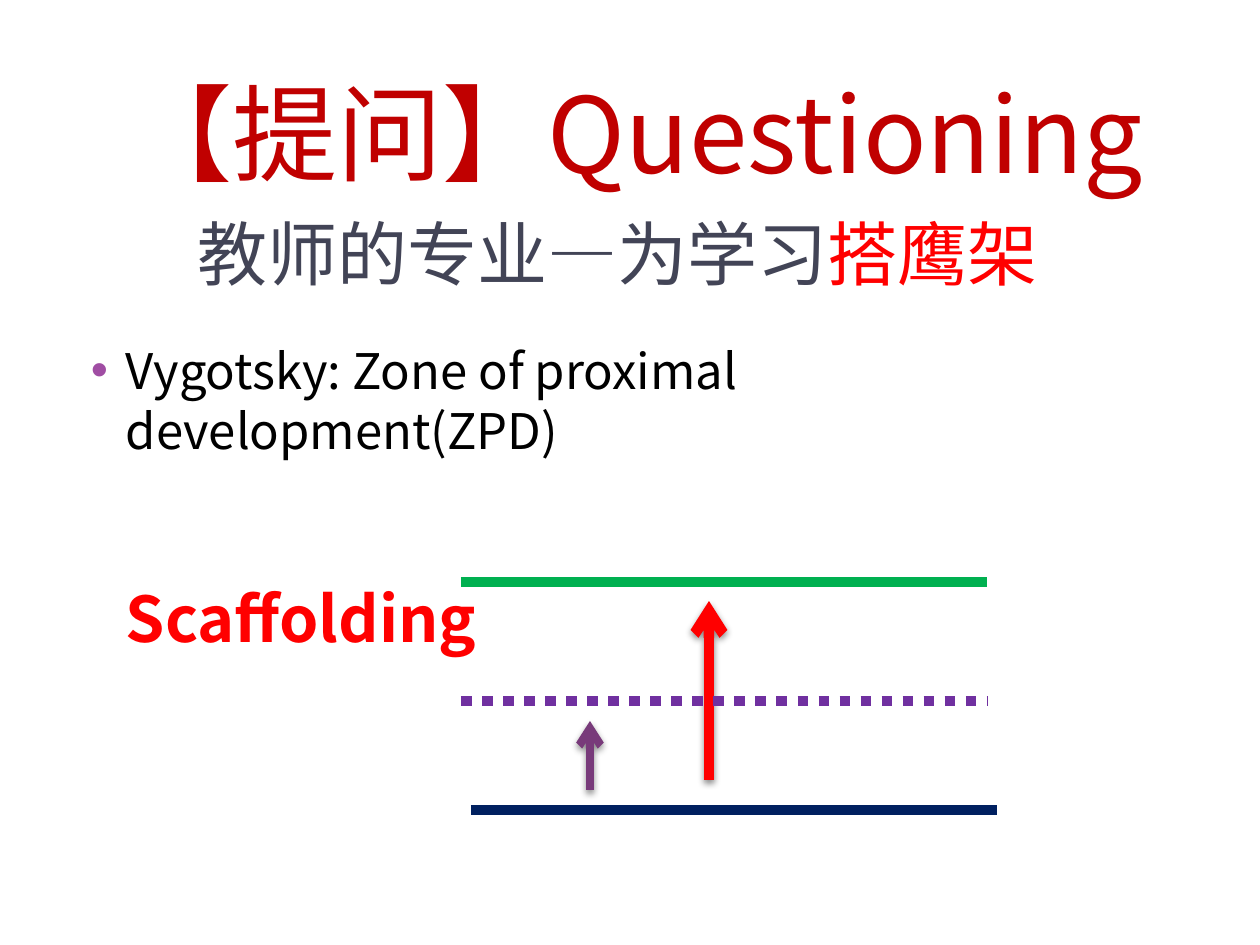
from lxml import etree
from pptx import Presentation
from pptx.dml.color import RGBColor
from pptx.enum.dml import MSO_LINE_DASH_STYLE as Dash
from pptx.enum.shapes import MSO_CONNECTOR as Connector
from pptx.enum.text import MSO_ANCHOR as Anchor
from pptx.oxml.ns import qn
from pptx.util import Emu, Pt

CRIMSON = RGBColor(0xC0, 0x00, 0x00)
SLATE = RGBColor(0x42, 0x44, 0x56)
RED = RGBColor(0xFF, 0x00, 0x00)
BLACK = RGBColor(0x00, 0x00, 0x00)
NAVY = RGBColor(0x00, 0x20, 0x60)
GREEN = RGBColor(0x00, 0xB0, 0x50)
PURPLE = RGBColor(0x70, 0x30, 0xA0)
PLUM = RGBColor(0x78, 0x3A, 0x7A)
ORCHID = RGBColor(0xA0, 0x4D, 0xA3)

TITLE_FONT = "Noto Sans CJK TC"
BODY_FONT = "Noto Sans CJK SC"


def px(count):
    return Emu(round(count * 914400 / 126))


def add_element(parent, tag, **attributes):
    element = etree.SubElement(parent, qn(tag))
    for name, value in attributes.items():
        element.set(name, str(value))
    return element


class SlideBuilder:
    def __init__(self, slide):
        self.slide = slide

    def text_box(self, left, top, width, height, anchor, bottom_inset=6):
        shape = self.slide.shapes.add_textbox(px(left), px(top), px(width), px(height))
        frame = shape.text_frame
        frame.word_wrap = True
        frame.vertical_anchor = anchor
        frame.margin_left = frame.margin_right = px(13)
        frame.margin_top = px(6)
        frame.margin_bottom = px(bottom_inset)
        return frame

    def paragraph(self, paragraph, pieces, font, size, before=0, spacing=None,
                  margin=0, bullet=None, bold=False):
        paragraph.space_before = Pt(before)
        if spacing:
            paragraph.line_spacing = Pt(spacing)
        properties = paragraph._p.get_or_add_pPr()
        properties.set("marL", str(px(margin)))
        properties.set("indent", str(px(-35) if bullet else 0))
        if bullet:
            color = add_element(properties, "a:buClr")
            add_element(color, "a:srgbClr", val=bullet)
            add_element(properties, "a:buFont", typeface="Arial")
            add_element(properties, "a:buChar", char="•")
        else:
            add_element(properties, "a:buNone")
        for text, color in pieces:
            run = paragraph.add_run()
            run.text = text
            run.font.name = font
            run.font.size = Pt(size)
            run.font.bold = bold
            run.font.color.rgb = color
            add_element(run._r.get_or_add_rPr(), "a:ea", typeface=font)

    def line(self, start, end, color, width, dash=None, arrow=False):
        line_shape = self.slide.shapes.add_connector(
            Connector.STRAIGHT, *map(px, start + end))
        line_shape.line.color.rgb = color
        line_shape.line.width = Pt(width)
        if dash:
            line_shape.line.dash_style = dash
        effects = add_element(line_shape._element.spPr, "a:effectLst")
        if arrow:
            add_element(line_shape.line._get_or_add_ln(), "a:tailEnd", type="arrow")
            shadow = add_element(effects, "a:outerShdw", blurRad=Pt(4), dist=Pt(2.1),
                                 dir=90 * 60000, rotWithShape=0)
            color_element = add_element(shadow, "a:srgbClr", val=BLACK)
            add_element(color_element, "a:alpha", val=45000)


def main():
    presentation = Presentation()
    presentation.slide_width = px(1260)
    presentation.slide_height = px(945)
    builder = SlideBuilder(presentation.slides.add_slide(presentation.slide_layouts[6]))

    title = builder.text_box(115, 71, 1134, 239, Anchor.MIDDLE, bottom_inset=24)
    builder.paragraph(title.paragraphs[0], [("【提问】Questioning", CRIMSON)],
                      TITLE_FONT, 60)
    builder.paragraph(title.add_paragraph(),
                      [("教师的专业—为学习", SLATE), ("搭鹰架", RED)],
                      TITLE_FONT, 40, before=9, margin=70)

    body = builder.text_box(63, 334, 1123, 572, Anchor.TOP)
    builder.paragraph(body.paragraphs[0],
                      [("Vygotsky: Zone of proximal development(ZPD)", BLACK)],
                      BODY_FONT, 28, before=3, spacing=34, margin=50, bullet=ORCHID)
    builder.paragraph(body.add_paragraph(), [("Scaffolding", RED)],
                      BODY_FONT, 36, before=69, spacing=43, margin=50, bold=True)

    builder.line((471, 810), (997, 810), NAVY, 6)
    builder.line((461, 582), (987, 582), GREEN, 6)
    builder.line((709, 780), (709, 601), RED, 6, arrow=True)
    builder.line((461, 701), (987, 701), PURPLE, 6, dash=Dash.ROUND_DOT)
    builder.line((590, 790), (590, 721), PLUM, 4.5, arrow=True)

    presentation.save("out.pptx")


if __name__ == "__main__":
    main()
